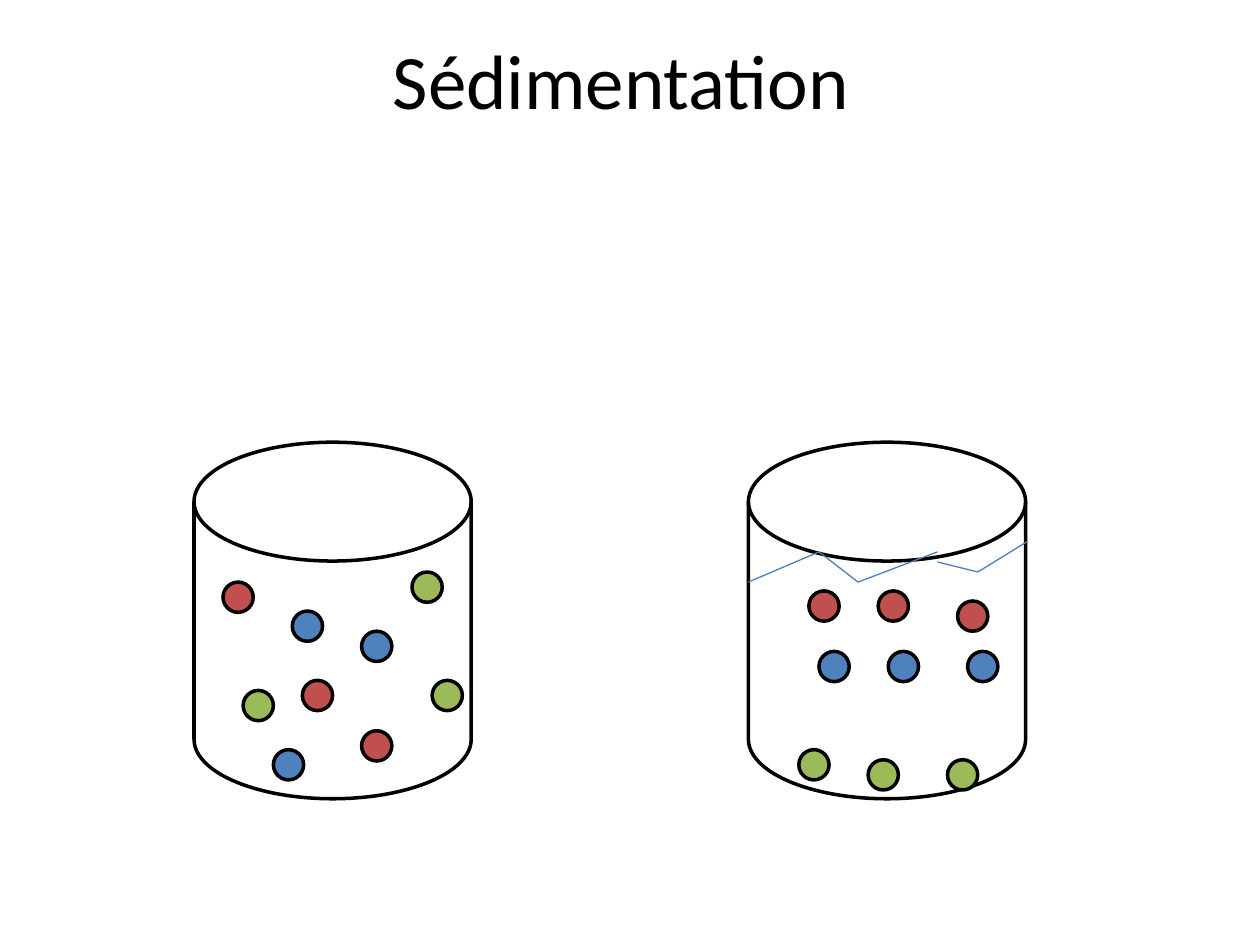
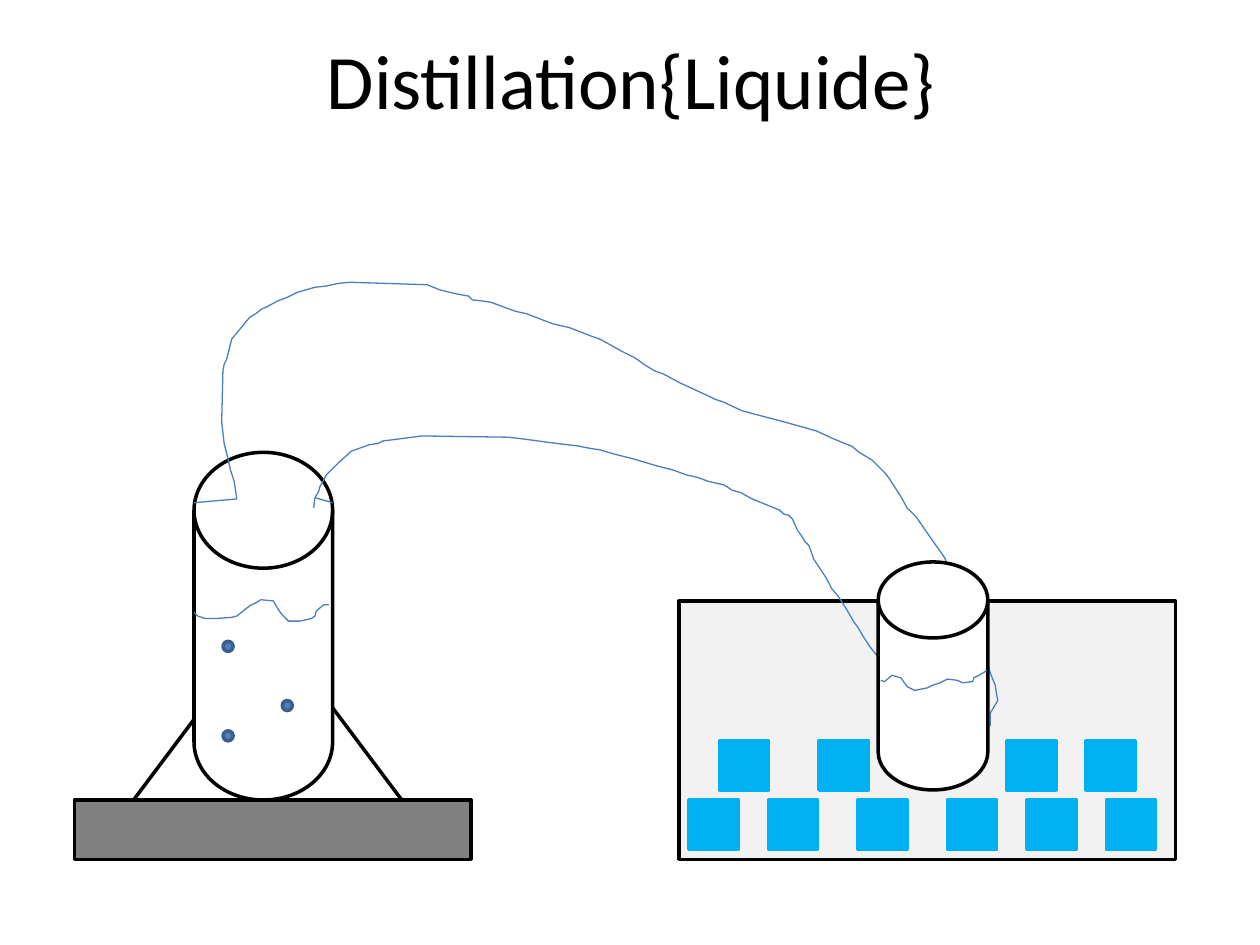
from itertools import pairwise
from lxml.etree import SubElement
from pptx import Presentation
from pptx.dml.color import RGBColor
from pptx.enum.shapes import MSO_CONNECTOR, MSO_SHAPE
from pptx.enum.text import MSO_ANCHOR, PP_ALIGN
from pptx.oxml.ns import qn
from pptx.util import Inches, Pt

HEX = {
    "black": "000000", "white": "FFFFFF", "red": "C0504D", "blue": "4F81BD",
    "green": "9BBB59", "wave": "4B7EBC", "rim": "3A5F8C", "ice": "00B0F0",
    "pale": "F2F2F2", "gray": "808080",
}

# Sedimentation: the same grains, first mixed and then settled
JARS = [(1.54, 3.51, 2.2, 2.83), (5.94, 3.51, 2.2, 2.83)]
GRAIN = 0.24
MIXED = {
    "red": [(1.77, 4.62), (2.4, 5.4), (2.87, 5.8)],
    "blue": [(2.17, 5.95), (2.32, 4.85), (2.87, 5.01)],
    "green": [(1.93, 5.48), (3.27, 4.54), (3.43, 5.4)],
}
SETTLED = {
    "green": [(6.34, 5.95), (6.89, 6.03), (7.52, 6.03)],
    "red": [(6.42, 4.69), (6.97, 4.69), (7.6, 4.77)],
    "blue": [(6.5, 5.17), (7.05, 5.17), (7.68, 5.17)],
}
RIPPLES = [
    [(5.94, 4.62), (6.5, 4.38), (6.81, 4.62), (7.44, 4.38)],
    [(7.44, 4.46), (7.76, 4.54), (8.15, 4.3)],
]

# Distillation
STAND = (1.06, 4.93, 2.13, 1.42)
TUB = (5.39, 4.77, 3.94, 2.05)
FLASK = (1.54, 3.59, 1.1, 2.76)
BASE = (0.59, 6.35, 3.15, 0.47)
CUP = (6.97, 4.46, 0.87, 1.81)
CUBE, BUBBLE = 0.39, 0.08
ICE = {
    6.35: [8.78, 8.15, 7.52, 6.81, 6.1, 5.47],
    5.88: [5.71, 6.5, 8.62, 7.99],
}
BUBBLES = [(1.77, 5.09), (2.24, 5.56), (1.77, 5.8)]
LIPS = [[(1.88, 3.96), (1.54, 3.99)], [(2.5, 3.95), (2.64, 3.99)]]

# Hand-drawn outlines, in hundredths of an inch
FLASK_LEVEL = [
    (154, 486), (157, 489), (163, 491), (171, 491), (184, 490), (188, 489),
    (198, 481), (204, 478), (207, 476), (217, 477), (221, 484), (224, 488),
    (229, 493), (238, 493), (247, 491), (250, 489), (251, 485), (257, 480),
    (261, 480),
]
CUP_LEVEL = [
    (699, 540), (702, 541), (708, 536), (715, 538), (720, 545), (726, 548),
    (736, 546), (740, 544), (746, 542), (752, 539), (760, 540), (764, 542),
    (772, 541), (773, 538), (777, 536), (782, 533), (783, 532),
]
LOWER_PIPE = [
    (249, 403), (250, 395), (253, 390), (254, 386), (257, 381), (259, 377),
    (262, 374), (268, 368), (279, 358), (282, 357), (293, 353), (300, 352),
    (304, 350), (320, 348), (335, 346), (403, 347), (412, 348), (442, 352),
    (459, 354), (469, 356), (476, 357), (486, 360), (502, 364), (522, 370),
    (534, 373), (545, 377), (554, 379), (562, 382), (575, 385), (581, 389),
    (588, 391), (597, 396), (619, 405), (622, 408), (626, 409), (629, 412),
    (633, 421), (636, 425), (639, 430), (642, 433), (646, 444), (656, 459),
    (660, 467), (665, 473), (671, 482), (678, 494), (681, 498), (685, 505),
    (691, 514), (699, 524), (706, 534), (712, 547), (716, 557), (718, 565),
    (724, 574), (726, 578),
]
UPPER_PIPE = [
    (188, 396), (186, 382), (183, 373), (181, 364), (178, 352), (176, 335),
    (177, 294), (178, 289), (180, 285), (183, 273), (184, 269), (194, 257),
    (198, 252), (203, 249), (208, 245), (211, 244), (220, 239), (228, 236),
    (236, 232), (250, 228), (259, 227), (268, 225), (278, 224), (339, 226),
    (349, 230), (361, 233), (372, 235), (375, 238), (384, 239), (390, 240),
    (409, 247), (418, 249), (431, 254), (439, 257), (452, 260), (470, 267),
    (476, 269), (485, 274), (494, 279), (504, 284), (511, 289), (519, 294),
    (527, 297), (540, 304), (551, 309), (568, 317), (574, 319), (589, 326),
    (604, 330), (623, 335), (648, 342), (661, 348), (673, 353), (676, 354),
    (682, 359), (692, 365), (703, 376), (706, 380), (715, 394), (720, 403),
    (727, 410), (743, 433), (750, 443), (753, 452), (757, 459), (760, 466),
    (765, 479), (770, 491), (774, 502), (780, 514), (783, 524), (786, 534),
    (790, 544), (791, 551), (792, 556), (789, 561), (786, 566), (786, 576),
]


def color(name):
    return RGBColor.from_string(HEX[name])


def write(shape, text, size=44, font="Calibri", ink="black"):
    frame = shape.text_frame
    frame.vertical_anchor = MSO_ANCHOR.MIDDLE
    par = frame.paragraphs[0]
    par.alignment = PP_ALIGN.CENTER
    run = par.add_run()
    run.text = text
    run.font.size, run.font.name = Pt(size), font
    run.font.color.rgb = color(ink)


def start(deck, title, left):
    """Add a slide with its title and return the slide's shapes."""
    shapes = deck.slides.add_slide(deck.slide_layouts[5]).shapes
    head = shapes.title
    head.left, head.top = Inches(left), Inches(0)
    head.width, head.height = Inches(9), Inches(1.25)
    write(head, title)
    return shapes


def pen(line, ink, width):
    line.color.rgb = color(ink)
    line.width = Pt(width)


def draw(shapes, kind, box, fill="white", ink="black"):
    shape = shapes.add_shape(kind, *map(Inches, box))
    shape.shadow.inherit = False
    shape.fill.solid()
    shape.fill.fore_color.rgb = color(fill)
    pen(shape.line, ink, 2)


def chain(shapes, points):
    """Join successive points with straight connectors."""
    for a, b in pairwise(points):
        link = shapes.add_connector(MSO_CONNECTOR.STRAIGHT, *map(Inches, a + b))
        pen(link.line, "wave", 0.75)
        SubElement(link._element.spPr, qn("a:effectLst"))


def trace(shapes, points):
    """Draw an open outline through points given in hundredths of an inch."""
    path = shapes.build_freeform(*points[0], scale=Inches(0.01))
    path.add_line_segments(points[1:], close=False)
    shape = path.convert_to_shape()
    shape.shadow.inherit = False
    shape.fill.background()
    pen(shape.line, "wave", 0.75)


def settle(deck):
    shapes = start(deck, "Sédimentation", 0.43)
    for jar in JARS:
        draw(shapes, MSO_SHAPE.FLOWCHART_MAGNETIC_DISK, jar)
    for group in (MIXED, SETTLED):
        for fill, spots in group.items():
            for x, y in spots:
                draw(shapes, MSO_SHAPE.OVAL, (x, y, GRAIN, GRAIN), fill)
    for ripple in RIPPLES:
        chain(shapes, ripple)


def distill(deck):
    shapes = start(deck, "Distillation{Liquide}", 0.51)
    disk = MSO_SHAPE.FLOWCHART_MAGNETIC_DISK
    plate = MSO_SHAPE.FLOWCHART_PROCESS
    draw(shapes, MSO_SHAPE.ISOSCELES_TRIANGLE, STAND)
    draw(shapes, plate, TUB, "pale")
    for y, row in ICE.items():
        for x in row:
            draw(shapes, MSO_SHAPE.RECTANGLE, (x, y, CUBE, CUBE), "ice", "ice")
    draw(shapes, disk, FLASK)
    for outline in (FLASK_LEVEL, LOWER_PIPE, UPPER_PIPE):
        trace(shapes, outline)
    for lip in LIPS:
        chain(shapes, lip)
    draw(shapes, plate, BASE, "gray")
    for x, y in BUBBLES:
        draw(shapes, MSO_SHAPE.FLOWCHART_CONNECTOR, (x, y, BUBBLE, BUBBLE), "blue", "rim")
    draw(shapes, disk, CUP)
    trace(shapes, CUP_LEVEL)


def main():
    deck = Presentation()
    deck.slide_width, deck.slide_height = Inches(10), Inches(7.5)
    settle(deck)
    distill(deck)
    deck.save("out.pptx")


if __name__ == "__main__":
    main()
